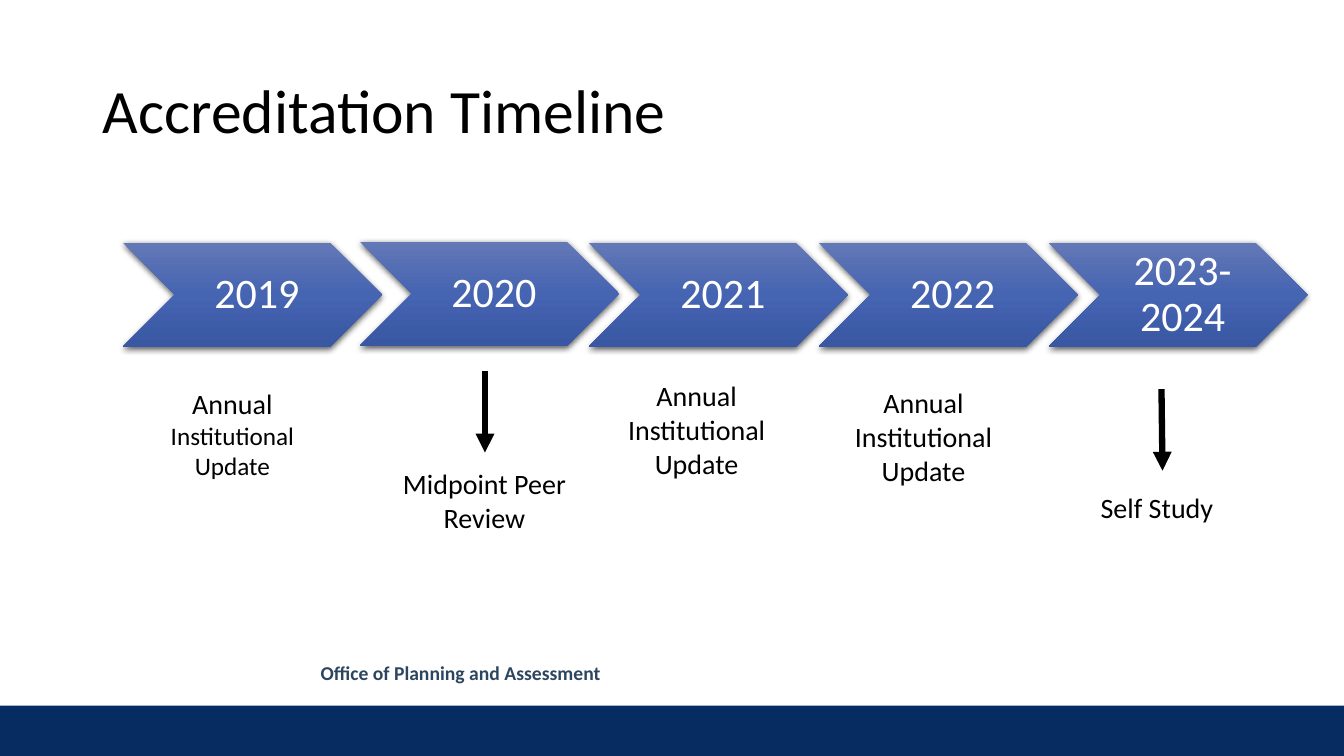
from lxml.etree import SubElement
from pptx import Presentation
from pptx.dml.color import RGBColor
from pptx.enum.shapes import MSO_CONNECTOR, MSO_SHAPE
from pptx.enum.text import MSO_ANCHOR, PP_ALIGN
from pptx.oxml import parse_xml
from pptx.oxml.ns import nsdecls, qn
from pptx.util import Inches, Pt

BLACK = RGBColor(0x00, 0x00, 0x00)
WHITE = RGBColor(0xFF, 0xFF, 0xFF)
NAVY = RGBColor(0x07, 0x2C, 0x62)
SLATE = RGBColor(0x2D, 0x46, 0x60)
CHEVRON_STOPS = ((0, "6378B7"), (50, "4564B1"), (100, "3957A2"))


def write(frame, *runs, color=BLACK, bold=False, align=PP_ALIGN.CENTER,
          anchor=MSO_ANCHOR.TOP, spacing=None, margins=(0.1, 0.05, 0.1, 0.05)):
    """Fill a frame with one paragraph of (text, size) runs."""
    frame.word_wrap = True
    frame.vertical_anchor = anchor
    (frame.margin_left, frame.margin_top,
     frame.margin_right, frame.margin_bottom) = map(Inches, margins)
    paragraph = frame.paragraphs[0]
    paragraph.alignment = align
    if spacing:
        paragraph.line_spacing = spacing
    for text, size in runs:
        run = paragraph.add_run()
        run.text = text
        run.font.name = "Calibri"
        run.font.size = Pt(size)
        run.font.bold = bold
        run.font.color.rgb = color


class TimelineSlide:
    def __init__(self, presentation):
        self.slide = presentation.slides.add_slide(presentation.slide_layouts[5])
        self.shapes = self.slide.shapes

    def title(self, text, *box):
        heading = self.shapes.title
        heading.left, heading.top, heading.width, heading.height = map(Inches, box)
        write(heading.text_frame, (text, 44), align=PP_ALIGN.LEFT,
              anchor=MSO_ANCHOR.MIDDLE, spacing=0.9)

    def bar(self, color, *box):
        band = self.shapes.add_shape(MSO_SHAPE.RECTANGLE, *map(Inches, box))
        band.shadow.inherit = False
        band.fill.solid()
        band.fill.fore_color.rgb = color
        band.line.fill.background()

    def label(self, *runs, box, **style):
        caption = self.shapes.add_textbox(*map(Inches, box))
        write(caption.text_frame, *runs, **style)

    def chevron(self, year, left, top):
        step = self.shapes.add_shape(MSO_SHAPE.CHEVRON, Inches(left), Inches(top),
                                     Inches(2.57), Inches(1.03))
        step.line.fill.background()
        stops = "".join(
            f'<a:gs pos="{pos * 1000}"><a:srgbClr val="{color}"/></a:gs>'
            for pos, color in CHEVRON_STOPS)
        properties = step._element.spPr
        properties.find(qn("a:prstGeom")).addnext(parse_xml(
            f'<a:gradFill {nsdecls("a")} rotWithShape="1"><a:gsLst>{stops}</a:gsLst>'
            '<a:lin ang="5400000" scaled="0"/></a:gradFill>'))
        properties.append(parse_xml(
            f'<a:effectLst {nsdecls("a")}><a:outerShdw blurRad="{Pt(4.5)}" '
            f'dist="{Pt(1.5)}" dir="5400000" algn="ctr" rotWithShape="0">'
            '<a:srgbClr val="000000"><a:alpha val="63000"/></a:srgbClr>'
            '</a:outerShdw></a:effectLst>'))
        write(step.text_frame, (year, 30), color=WHITE, anchor=MSO_ANCHOR.MIDDLE,
              spacing=0.9, margins=(0.13, 0.04, 0.04, 0.04))

    def arrow(self, *ends):
        pointer = self.shapes.add_connector(MSO_CONNECTOR.STRAIGHT, *map(Inches, ends))
        pointer.line.color.rgb = BLACK
        pointer.line.width = Pt(4.5)
        SubElement(pointer.line._get_or_add_ln(), qn("a:tailEnd"), type="triangle")
        SubElement(pointer._element.spPr, qn("a:effectLst"))


def main():
    presentation = Presentation()
    presentation.slide_width = Inches(13.33)
    presentation.slide_height = Inches(7.5)
    timeline = TimelineSlide(presentation)

    # Footer and title
    timeline.bar(NAVY, 0, 7, 13.33, 0.5)
    timeline.label(("Office of Planning and Assessment", 14),
                   box=(3.18, 6.54, 5.27, 0.25), color=SLATE, bold=True,
                   align=PP_ALIGN.JUSTIFY, spacing=1.07, margins=(0, 0, 0, 0))
    timeline.title("Accreditation Timeline", 0.92, 0.4, 11.5, 1.45)

    # Years
    for year, left, top in (("2019", 1.22, 2.41), ("2020", 3.57, 2.4),
                            ("2021", 5.84, 2.41), ("2022", 8.12, 2.41),
                            ("2023-2024", 10.4, 2.41)):
        timeline.chevron(year, left, top)

    # Yearly updates
    timeline.label(("Annual", 20), (" Institutional Update", 18),
                   box=(1.44, 3.78, 1.73, 1.04), anchor=MSO_ANCHOR.MIDDLE)
    for left, top in ((5.93, 3.71), (8.18, 3.78)):
        timeline.label(("Annual Institutional Update", 20),
                       box=(left, top, 1.96, 1.11))

    # Reviews
    timeline.arrow(4.81, 3.68, 4.81, 4.49)
    timeline.label(("Midpoint Peer Review", 20), box=(3.68, 4.58, 2.25, 0.77))
    timeline.arrow(11.52, 3.86, 11.53, 4.67)
    timeline.label(("Self Study", 20), box=(10.77, 4.82, 1.41, 0.44))

    presentation.save("out.pptx")


if __name__ == "__main__":
    main()
